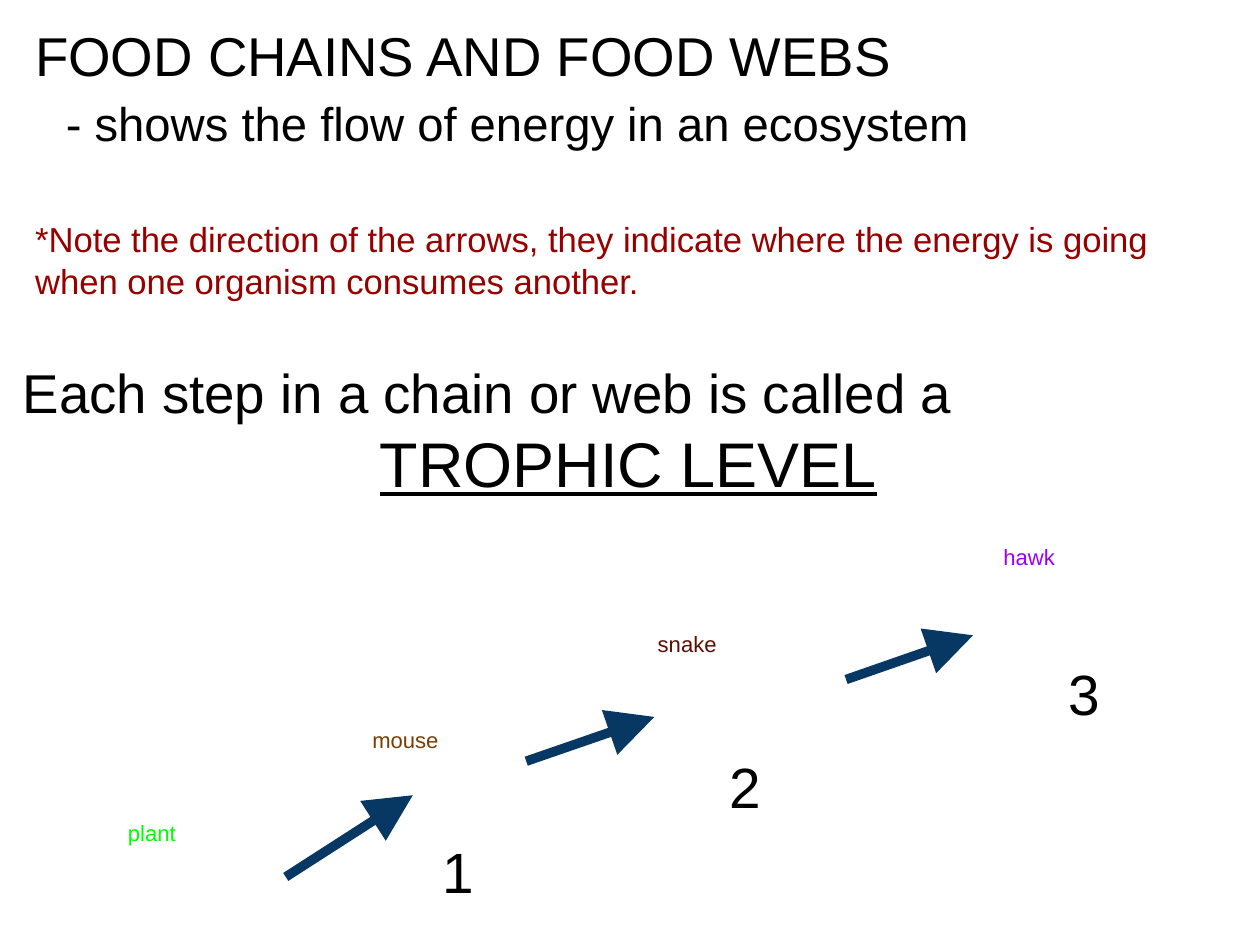
import pptx
import pptx.util
import pptx.dml.color
import pptx.enum.shapes
import pptx.enum.text
import pptx.oxml
import pptx.oxml.ns

Inches = pptx.util.Inches
Pt = pptx.util.Pt
ALIGN = pptx.enum.text.PP_ALIGN

COLORS = {
    "text": "000000",
    "note": "980000",
    "arrow": "073763",
    "plant": "00FF00",
    "mouse": "783F04",
    "snake": "5B0F00",
    "hawk": "9900FF",
}

# Organism label boxes: left, top, width, height
ORGANISMS = {
    "plant": (0.16, 7.17, 2.36, 0.86),
    "mouse": (2.62, 6.35, 1.91, 0.65),
    "snake": (4.83, 5.51, 2.46, 0.75),
    "hawk": (7.58, 4.74, 2.99, 0.75),
}

# Energy flow arrows: from x, y, to x, y
ARROWS = [
    (2.52, 7.73, 3.64, 7.01),
    (4.64, 6.71, 5.77, 6.32),
    (7.46, 5.99, 8.58, 5.6),
]

# Trophic level numbers: left, top, width, height
LEVELS = [
    (3.8, 7.28, 0.57, 0.65),
    (6.33, 6.53, 0.42, 0.65),
    (9.32, 5.71, 0.57, 0.65),
]


def rgb(name):
    return pptx.dml.color.RGBColor.from_string(COLORS[name])


def add_text_frame(slide, box, inset_x, inset_y):
    tf = slide.shapes.add_textbox(*map(Inches, box)).text_frame
    tf.word_wrap = True
    tf.margin_left = tf.margin_right = Inches(inset_x)
    tf.margin_top = tf.margin_bottom = Inches(inset_y)
    return tf


def write(p, text, size, color="text", align=ALIGN.LEFT, before=0, indent=0):
    p.text = text
    p.font.name = "Arial"
    p.font.size = Pt(size)
    p.font.color.rgb = rgb(color)
    p.alignment = align
    p.space_before = Pt(before)
    if indent:
        p._p.get_or_add_pPr().set("marL", str(Inches(indent)))


def add_heading(slide):
    tf = add_text_frame(slide, (0.27, 0.15, 10.57, 2.97), 0.04, 0.04)
    write(tf.paragraphs[0], "FOOD CHAINS AND FOOD WEBS", 34.7)
    write(tf.add_paragraph(), "- shows the flow of energy in an ecosystem", 30,
          before=4.7, indent=0.27)
    write(tf.add_paragraph(),
          "*Note the direction of the arrows, they indicate where the energy "
          "is going when one organism consumes another.",
          22, "note", before=42.2)


def add_definition(slide):
    tf = add_text_frame(slide, (0.16, 3.12, 10.27, 1.29), 0.04, 0.04)
    write(tf.paragraphs[0], "Each step in a chain or web is called a", 34.7)
    p = tf.add_paragraph()
    write(p, "TROPHIC LEVEL", 40, indent=3.15)
    p.runs[0].font.underline = True


def add_arrow(slide, ends):
    line = slide.shapes.add_connector(
        pptx.enum.shapes.MSO_CONNECTOR.STRAIGHT, *map(Inches, ends))
    line.line.color.rgb = rgb("arrow")
    line.line.width = Pt(6)
    ln = line.line._get_or_add_ln()
    ln.append(pptx.oxml.parse_xml(
        f'<a:tailEnd {pptx.oxml.ns.nsdecls("a")} type="triangle" w="lg" len="lg"/>'))
    ln.addnext(pptx.oxml.parse_xml(
        f'<a:effectLst {pptx.oxml.ns.nsdecls("a")}/>'))


def main():
    prs = pptx.Presentation()
    prs.slide_width = Inches(11.11)
    prs.slide_height = Inches(8.33)
    slide = prs.slides.add_slide(prs.slide_layouts[6])

    # Explanation
    add_heading(slide)
    add_definition(slide)

    # Food chain
    for name, box in ORGANISMS.items():
        tf = add_text_frame(slide, box, 0.1, 0.05)
        write(tf.paragraphs[0], name, 14, name, ALIGN.CENTER)
    for ends in ARROWS:
        add_arrow(slide, ends)

    # Trophic levels
    for number, box in enumerate(LEVELS, start=1):
        tf = add_text_frame(slide, box, 0.1, 0.1)
        write(tf.paragraphs[0], str(number), 36)

    prs.save("out.pptx")


if __name__ == "__main__":
    main()
